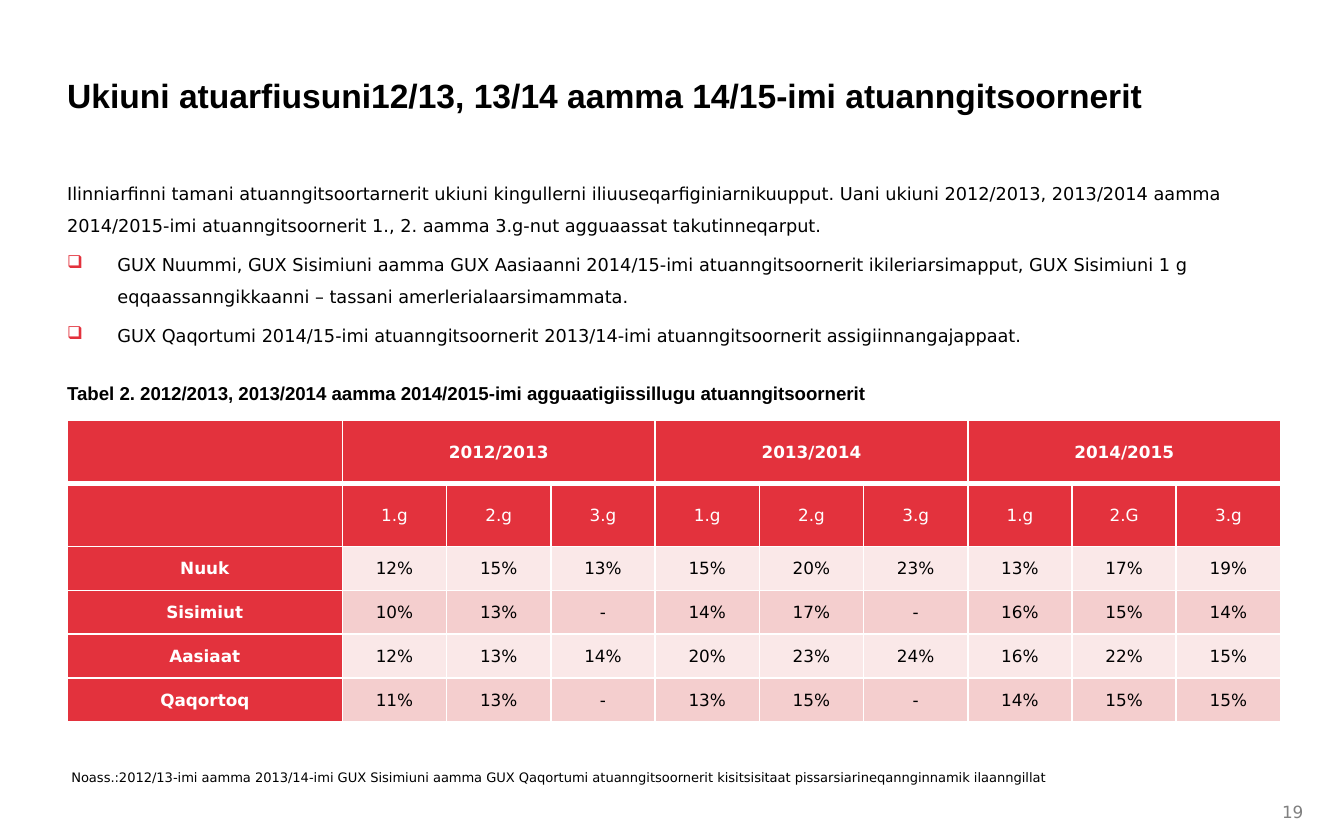
from lxml import etree
from pptx import Presentation
from pptx.dml.color import RGBColor
from pptx.enum.text import MSO_ANCHOR, PP_ALIGN
from pptx.oxml.ns import qn
from pptx.util import Cm, Pt

RED = RGBColor(0xE3, 0x32, 0x3D)
PALE = RGBColor(0xFA, 0xE8, 0xE8)
PINK = RGBColor(0xF4, 0xCE, 0xCE)
BLACK = RGBColor(0, 0, 0)
WHITE = RGBColor(0xFF, 0xFF, 0xFF)
GREY = RGBColor(0x80, 0x80, 0x80)
CENTER = PP_ALIGN.CENTER
LEFT = PP_ALIGN.LEFT
TOP = MSO_ANCHOR.TOP
MIDDLE = MSO_ANCHOR.MIDDLE
SANS = "DejaVu Sans"
HEADING = "Arial"


def write(paragraph, text, size=9, font=SANS, color=BLACK, bold=False,
          align=LEFT, line=1.0, before=0, after=0, bullet=None):
    paragraph.alignment = align
    paragraph.line_spacing = line
    paragraph.space_before = Pt(before)
    paragraph.space_after = Pt(after)
    if bullet:
        properties = paragraph._p.get_or_add_pPr()
        properties.set("marL", str(Cm(0.95)))
        properties.set("indent", str(-Cm(0.95)))
        bullet_color = etree.SubElement(properties, qn("a:buClr"))
        etree.SubElement(bullet_color, qn("a:srgbClr"), val=str(RED))
        etree.SubElement(properties, qn("a:buChar"), char=bullet)
    run = paragraph.add_run()
    run.text = text
    run.font.size = Pt(size)
    run.font.name = font
    run.font.bold = bold
    run.font.color.rgb = color


def add_frame(left, top, width, height, anchor=TOP):
    frame = slide.shapes.add_textbox(Cm(left), Cm(top), Cm(width), Cm(height)).text_frame
    frame.margin_left = frame.margin_top = frame.margin_right = frame.margin_bottom = 0
    frame.word_wrap = True
    frame.vertical_anchor = anchor
    return frame


presentation = Presentation()
presentation.slide_width = Cm(25.4)
presentation.slide_height = Cm(15.88)
slide = presentation.slides.add_slide(presentation.slide_layouts[6])

title = add_frame(1.27, 1.42, 22.86, 1.5)
write(title.paragraphs[0], "Ukiuni atuarfiusuni12/13, 13/14 aamma 14/15-imi atuanngitsoornerit",
      size=18, font=HEADING, bold=True)

body = add_frame(1.27, 3.25, 22.86, 3.81)
write(body.paragraphs[0],
      "Ilinniarfinni tamani atuanngitsoortarnerit ukiuni kingullerni iliuuseqarfiginiarnikuupput. "
      "Uani ukiuni 2012/2013, 2013/2014 aamma 2014/2015-imi atuanngitsoornerit 1., 2. aamma "
      "3.g-nut agguaassat takutinneqarput.", size=9.5, line=1.5, after=2)
for text in (
    "GUX Nuummi, GUX Sisimiuni aamma GUX Aasiaanni 2014/15-imi atuanngitsoornerit "
    "ikileriarsimapput, GUX Sisimiuni 1 g eqqaassanngikkaanni – tassani amerlerialaarsimammata.",
    "GUX Qaqortumi 2014/15-imi atuanngitsoornerit 2013/14-imi atuanngitsoornerit "
    "assigiinnangajappaat.",
):
    write(body.add_paragraph(), text, size=9.5, line=1.5, before=2, after=2, bullet="❑")

caption = add_frame(1.27, 7.16, 16.94, 0.48)
write(caption.paragraphs[0],
      "Tabel 2. 2012/2013, 2013/2014 aamma 2014/2015-imi agguaatigiissillugu atuanngitsoornerit",
      size=10, font=HEADING, bold=True, line=1.14)

note = add_frame(1.35, 14.4, 22.86, 0.84)
write(note.paragraphs[0],
      "Noass.:2012/13-imi aamma 2013/14-imi GUX Sisimiuni aamma GUX Qaqortumi "
      "atuanngitsoornerit kisitsisitaat pissarsiarineqannginnamik ilaanngillat", size=7, line=1.5)

page_number = add_frame(24.23, 15.19, 0.64, 0.23, anchor=MIDDLE)
write(page_number.paragraphs[0], "19", color=GREY, line=1.2)

rows = [
    ["", "2012/2013", "", "", "2013/2014", "", "", "2014/2015", "", ""],
    ["", "1.g", "2.g", "3.g", "1.g", "2.g", "3.g", "1.g", "2.G", "3.g"],
    ["Nuuk", "12%", "15%", "13%", "15%", "20%", "23%", "13%", "17%", "19%"],
    ["Sisimiut", "10%", "13%", "-", "14%", "17%", "-", "16%", "15%", "14%"],
    ["Aasiaat", "12%", "13%", "14%", "20%", "23%", "24%", "16%", "22%", "15%"],
    ["Qaqortoq", "11%", "13%", "-", "13%", "15%", "-", "14%", "15%", "15%"],
]
table = slide.shapes.add_table(len(rows), len(rows[0]), Cm(1.27), Cm(7.95),
                               Cm(22.93), Cm(5.7)).table
for index, column in enumerate(table.columns):
    column.width = Cm(1.97 if index else 5.2)
for index, row in enumerate(table.rows):
    row.height = Cm(1.19 if index < 2 else 0.83)
for first in (1, 4, 7):
    table.cell(0, first).merge(table.cell(0, first + 2))

for row_index, values in enumerate(rows):
    for column_index, text in enumerate(values):
        cell = table.cell(row_index, column_index)
        heading = row_index < 2 or column_index == 0
        cell.margin_left = cell.margin_top = cell.margin_right = Cm(0.03)
        cell.margin_bottom = 0
        cell.vertical_anchor = MIDDLE
        for side in ("L", "R", "T", "B"):
            thick = (row_index, side) in ((0, "B"), (1, "T"))
            border = etree.SubElement(cell._tc.get_or_add_tcPr(), qn(f"a:ln{side}"),
                                      w=str(Pt(3 if thick else 1)))
            border_fill = etree.SubElement(border, qn("a:solidFill"))
            etree.SubElement(border_fill, qn("a:srgbClr"), val=str(WHITE))
        cell.fill.solid()
        cell.fill.fore_color.rgb = RED if heading else (PINK if row_index % 2 else PALE)
        if text:
            write(cell.text_frame.paragraphs[0], text, color=WHITE if heading else BLACK,
                  bold=row_index == 0 or column_index == 0, align=CENTER)

presentation.save("out.pptx")
